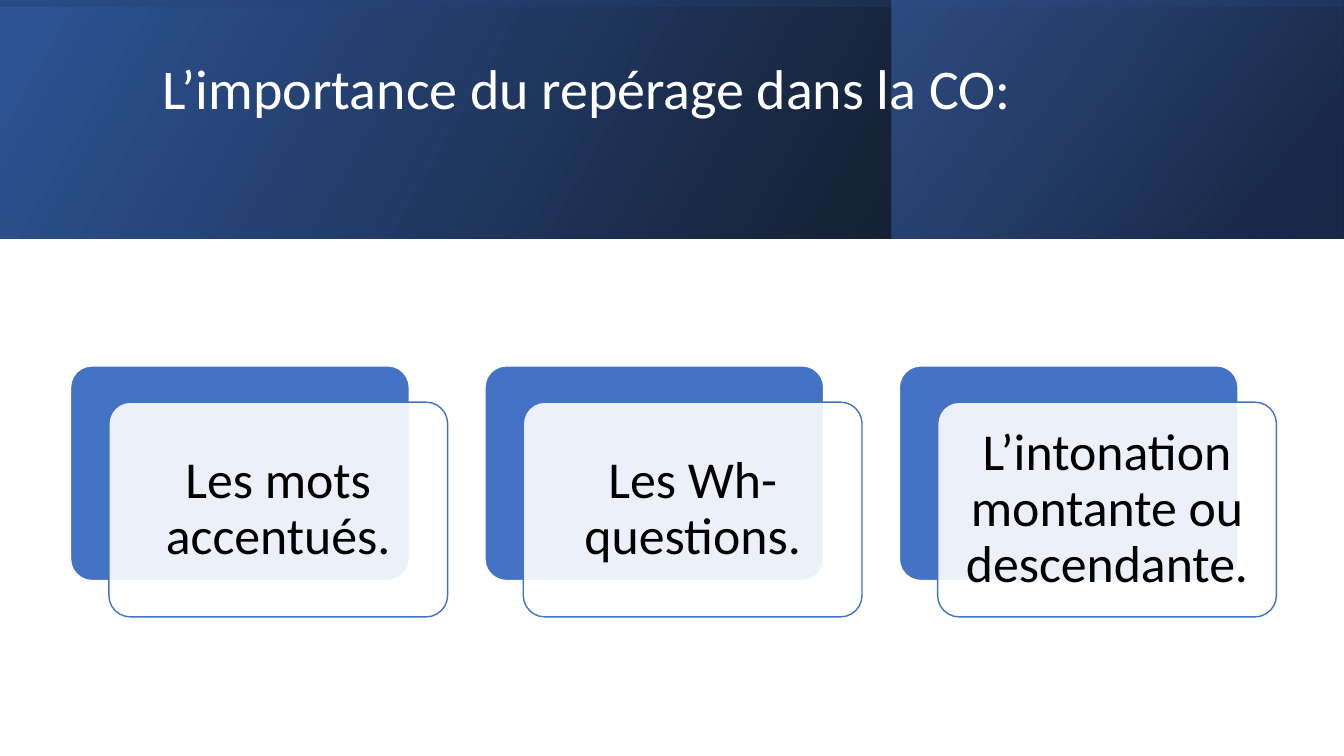
from lxml import etree
from pptx import Presentation
from pptx.dml.color import RGBColor
from pptx.enum.shapes import MSO_SHAPE
from pptx.enum.text import MSO_ANCHOR, MSO_AUTO_SIZE, PP_ALIGN
from pptx.oxml.ns import qn
from pptx.util import Inches, Pt

RECT, ROUNDED = MSO_SHAPE.RECTANGLE, MSO_SHAPE.ROUNDED_RECTANGLE
LEFT, CENTER = PP_ALIGN.LEFT, PP_ALIGN.CENTER
MIDDLE = MSO_ANCHOR.MIDDLE
NO_AUTOFIT = MSO_AUTO_SIZE.NONE

FONT = "Calibri"
COLORS = {"white": "FFFFFF", "black": "000000", "blue": "4472C4",
          "deep": "2F5597", "navy": "203864"}

TITLE = "L’importance du repérage dans la CO:"
CARDS = ["Les mots accentués.", "Les Wh- questions.",
         "L’intonation montante ou descendante."]

# Header bands: box, rotation, gradient angle, stops (position, colour, opacity in %)
BANDS = [
    ((0, 0, 13.33, 2.37), 0, 330, [(0, "black", 96), (100, "deep", 100)]),
    ((8.84, 0, 4.48, 2.37), 0, 320, [(19, "navy", 68), (100, "blue", 48)]),
    ((5.48, -5.48, 2.37, 13.33), 270, 350, [(23, "deep", 16), (99, "black", 45)]),
]
TITLE_BOX = (1.51, 0.38, 10.63, 1.72)
CARD_LEFT, CARD_TOP, CARD_W, CARD_H = 0.7, 3.63, 3.36, 2.13
CARD_PITCH = 4.11
FRONT_DX, FRONT_DY = 0.38, 0.36


def rgb(name):
    return RGBColor.from_string(COLORS[name])


def set_opacity(color_element, percent):
    etree.SubElement(color_element, qn("a:alpha")).set("val", str(percent * 1000))


def add_shape(slide, kind, box, fill=None, line=None):
    sp = slide.shapes.add_shape(kind, *map(Inches, box))
    sp.shadow.inherit = False
    if fill:
        sp.fill.solid()
        sp.fill.fore_color.rgb = rgb(fill)
    if line:
        sp.line.color.rgb = rgb(line)
        sp.line.width = Pt(1)
    else:
        sp.line.fill.background()
    return sp


def add_band(slide, box, rotation, angle, stops):
    """Add a mirrored rectangle with a translucent linear gradient."""
    sp = add_shape(slide, RECT, box)
    sp.rotation = rotation
    sp_pr = sp._element.spPr
    sp_pr.find(qn("a:xfrm")).set("flipH", "1")
    grad = etree.Element(qn("a:gradFill"))
    stop_list = etree.SubElement(grad, qn("a:gsLst"))
    for position, color, opacity in stops:
        gs = etree.SubElement(stop_list, qn("a:gs"), pos=str(position * 1000))
        clr = etree.SubElement(gs, qn("a:srgbClr"), val=COLORS[color])
        set_opacity(clr, opacity)
    etree.SubElement(grad, qn("a:lin"), ang=str(angle * 60000), scaled="0")
    sp_pr.find(qn("a:prstGeom")).addnext(grad)


def write(sp, text, size, color, align, insets):
    tf = sp.text_frame
    tf.word_wrap = True
    tf.auto_size = NO_AUTOFIT
    tf.vertical_anchor = MIDDLE
    tf.margin_left, tf.margin_top, tf.margin_right, tf.margin_bottom = map(Inches, insets)
    p = tf.paragraphs[0]
    p.alignment = align
    p.line_spacing = 0.9
    r = p.add_run()
    r.text = text
    r.font.name = FONT
    r.font.size = Pt(size)
    r.font.color.rgb = rgb(color)


def add_card(slide, left, text):
    back = add_shape(slide, ROUNDED, (left, CARD_TOP, CARD_W, CARD_H), "blue", "white")
    front = add_shape(slide, ROUNDED, (left + FRONT_DX, CARD_TOP + FRONT_DY, CARD_W, CARD_H),
                      "white", "blue")
    for sp in (back, front):
        sp.adjustments[0] = 0.1
    set_opacity(front._element.spPr.find(qn("a:solidFill"))[0], 90)
    write(front, text, size=37, color="black", align=CENTER, insets=[0.15] * 4)


def main():
    prs = Presentation()
    prs.slide_width, prs.slide_height = Inches(13.33), Inches(7.5)
    slide = prs.slides.add_slide(prs.slide_layouts[5])

    for band in BANDS:
        add_band(slide, *band)

    title = slide.shapes.title
    title.left, title.top, title.width, title.height = map(Inches, TITLE_BOX)
    # The deep bottom inset lifts the title above the middle of the header
    write(title, TITLE, size=40, color="white", align=LEFT, insets=(0.1, 0.05, 0.1, 0.71))
    slide.shapes._spTree.append(title._element)  # in front of the bands

    for i, text in enumerate(CARDS):
        add_card(slide, CARD_LEFT + i * CARD_PITCH, text)

    prs.save("out.pptx")


if __name__ == "__main__":
    main()
